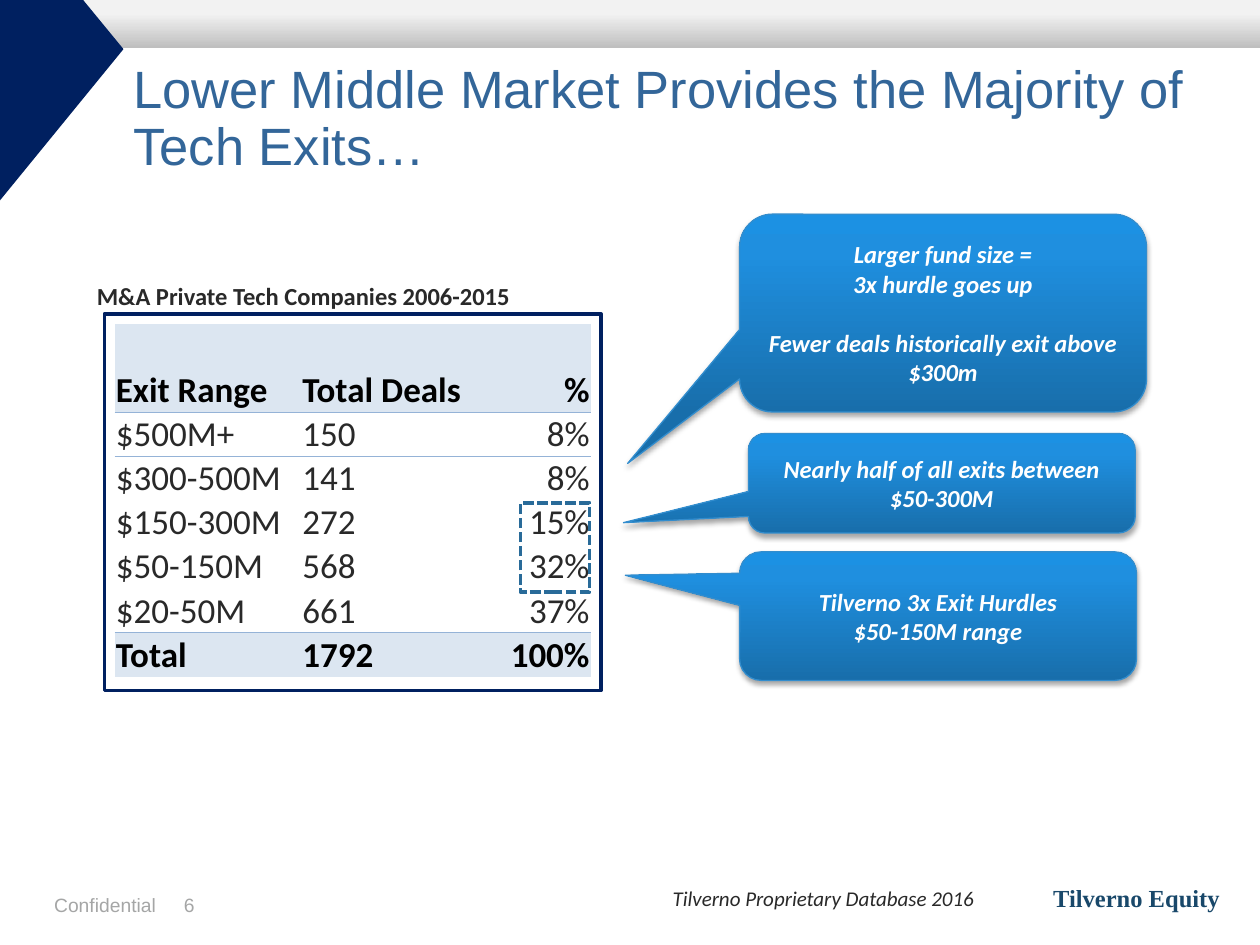
from lxml import etree
from pptx import Presentation
from pptx.dml.color import RGBColor
from pptx.enum.dml import MSO_LINE
from pptx.enum.shapes import MSO_SHAPE
from pptx.enum.text import MSO_ANCHOR, PP_ALIGN
from pptx.oxml.ns import qn
from pptx.util import Inches, Pt

RECTANGLE = MSO_SHAPE.RECTANGLE
CALLOUT = MSO_SHAPE.ROUNDED_RECTANGULAR_CALLOUT
DASH = MSO_LINE.SQUARE_DOT
TOP, MIDDLE, BOTTOM = MSO_ANCHOR.TOP, MSO_ANCHOR.MIDDLE, MSO_ANCHOR.BOTTOM
LEFT, CENTER, RIGHT = PP_ALIGN.LEFT, PP_ALIGN.CENTER, PP_ALIGN.RIGHT

NAVY, INK, GRAY, RULE, BAND = "002060", "292929", "A5A6A6", "95B3D7", "DCE6F1"
HEADER_STOPS = [(0, "BFBFBF"), (72, "F2F2F2")]
CALLOUT_STOPS = [(0, "186EAB"), (80, "1F8FDF"), (100, "1C91E3")]
PLAIN_TABLE_STYLE = "{2D5ABB26-0587-4C30-8999-92F81FD0307C}"

EXITS = [
    ("Exit Range", "Total Deals", "%"),
    ("$500M+", "150", "8%"),
    ("$300-500M", "141", "8%"),
    ("$150-300M", "272", "15%"),
    ("$50-150M", "568", "32%"),
    ("$20-50M", "661", "37%"),
    ("Total", "1792", "100%"),
]
COLUMN_WIDTHS = [1.48, 1.48, 0.82]
ROW_HEIGHTS = [0.7] + [0.35] * 6

# Place, pointer tip and (text, space before in points) of each callout
CALLOUTS = [
    ((5.87, 1.7, 3.23, 1.57), (-0.775, 0.76),
     [("Larger fund size =", 0), ("3x hurdle goes up", 0),
      ("Fewer deals historically exit above $300m", 17)]),
    ((5.87, 4.38, 3.15, 1.02), (-0.788, -0.318),
     [("Tilverno 3x Exit Hurdles", 0), ("$50-150M range", 0)]),
    ((5.94, 3.44, 3.07, 0.79), (-0.823, 0.396),
     [("Nearly half of all exits between $50-300M", 0)]),
]


def rgb(color):
    return RGBColor.from_string(color)


def add_xml(parent, tag, **attributes):
    return etree.SubElement(parent, qn(tag), attributes)


def set_gradient(shape, stops):
    """Fill from bottom to top with (percent, color) stops."""
    shape.fill.gradient()
    shape.fill.gradient_angle = 90
    stop_list = shape._element.spPr.find(".//" + qn("a:gsLst"))
    for stop in list(stop_list):
        stop_list.remove(stop)
    for percent, color in stops:
        stop = add_xml(stop_list, "a:gs", pos=str(percent * 1000))
        add_xml(stop, "a:srgbClr", val=color)


def set_line(shape, color, width):
    shape.line.color.rgb = rgb(color)
    shape.line.width = Pt(width)


def add_shape(page, kind, place):
    shape = page.shapes.add_shape(kind, *map(Inches, place))
    shape.shadow.inherit = False
    return shape


def write(para, text, size, color, font="Calibri", bold=False, italic=False, align=LEFT):
    para.alignment = align
    span = para.add_run()
    span.text = text
    span.font.name, span.font.size = font, Pt(size)
    span.font.bold, span.font.italic = bold, italic
    span.font.color.rgb = rgb(color)


def add_text(page, place, text, size, color, inset=True, wrap=False, anchor=TOP,
             spacing=None, **style):
    frame = page.shapes.add_textbox(*map(Inches, place)).text_frame
    frame.word_wrap = wrap
    frame.vertical_anchor = anchor
    if not inset:
        frame.margin_left = frame.margin_right = 0
        frame.margin_top = frame.margin_bottom = 0
    para = frame.paragraphs[0]
    para.line_spacing = spacing
    write(para, text, size, color, **style)


def add_corner(page):
    builder = page.shapes.build_freeform(0, 0, scale=Inches(0.01))
    builder.add_line_segments([(66, 0), (98, 39), (0, 159)], close=True)
    corner = builder.convert_to_shape()
    corner.shadow.inherit = False
    corner.fill.solid()
    corner.fill.fore_color.rgb = rgb(NAVY)
    corner.line.fill.background()


def add_rule(cell, side):
    line = etree.Element(qn(side), w=str(Pt(0.5)))
    add_xml(add_xml(line, "a:solidFill"), "a:srgbClr", val=RULE)
    cell._tc.get_or_add_tcPr().insert(0, line)


def add_exit_table(page):
    place = map(Inches, (0.91, 2.57, sum(COLUMN_WIDTHS), sum(ROW_HEIGHTS)))
    table = page.shapes.add_table(len(EXITS), len(COLUMN_WIDTHS), *place).table
    table.first_row = table.horz_banding = False
    table._tbl.tblPr.find(qn("a:tableStyleId")).text = PLAIN_TABLE_STYLE
    for column, width in zip(table.columns, COLUMN_WIDTHS):
        column.width = Inches(width)
    last = len(EXITS) - 1
    for i, values in enumerate(EXITS):
        table.rows[i].height = Inches(ROW_HEIGHTS[i])
        strong = i in (0, last)
        for j, value in enumerate(values):
            cell = table.cell(i, j)
            cell.vertical_anchor = BOTTOM
            cell.margin_left = cell.margin_right = cell.margin_top = Inches(0.01)
            cell.margin_bottom = 0
            if strong:
                cell.fill.solid()
                cell.fill.fore_color.rgb = rgb(BAND)
            else:
                cell.fill.background()
            if i in (0, last - 1):
                add_rule(cell, "a:lnB")
            if i in (1, last):
                add_rule(cell, "a:lnT")
            write(cell.text_frame.paragraphs[0], value, 20,
                  "000000" if strong else INK, bold=strong,
                  align=RIGHT if j == 2 else LEFT)


def add_callout(page, place, tip, lines):
    callout = add_shape(page, CALLOUT, place)
    for i, value in enumerate((*tip, 0.167)):
        callout.adjustments[i] = value
    set_gradient(callout, CALLOUT_STOPS)
    set_line(callout, "328DCE", 0.75)
    # Soft shadow straight below
    effects = callout._element.spPr.find(qn("a:effectLst"))
    shadow = add_xml(effects, "a:outerShdw", blurRad=str(Pt(3.1)), dist=str(Pt(1.8)),
                     dir="5400000", rotWithShape="0")
    add_xml(add_xml(shadow, "a:srgbClr", val="000000"), "a:alpha", val="35000")
    frame = callout.text_frame
    frame.word_wrap = True
    frame.vertical_anchor = MIDDLE
    for i, (text, gap) in enumerate(lines):
        para = frame.add_paragraph() if i else frame.paragraphs[0]
        if gap:
            para.space_before = Pt(gap)
        write(para, text, 14, "FFFFFF", bold=True, italic=True, align=CENTER)


def main():
    deck = Presentation()
    deck.slide_width, deck.slide_height = Inches(10), Inches(7.5)
    page = deck.slides.add_slide(deck.slide_layouts[6])

    # Header
    band = add_shape(page, RECTANGLE, (0, 0, 10, 0.38))
    set_gradient(band, HEADER_STOPS)
    band.line.fill.background()
    add_corner(page)
    add_text(page, (1.06, 0.44, 8.58, 1.02),
             "Lower Middle Market Provides the Majority of Tech Exits…", 30, "336699",
             inset=False, wrap=True, anchor=MIDDLE, spacing=0.9, font="Arial")

    # Footer
    add_text(page, (0.43, 7.09, 0.94, 0.29), "Confidential", 11, GRAY,
             inset=False, wrap=True, font="Arial")
    add_text(page, (1.46, 7.09, 0.63, 0.29), "6", 11, GRAY,
             inset=False, wrap=True, font="Arial")
    add_text(page, (5.24, 6.98, 2.84, 0.3), "Tilverno Proprietary Database 2016",
             12, INK, italic=True)
    add_text(page, (8.26, 6.96, 1.78, 0.34), "Tilverno Equity", 14, "19486A",
             font="Times New Roman", bold=True)

    # Framed table
    add_text(page, (0.67, 2.18, 3.51, 0.34), "M&A Private Tech Companies 2006-2015",
             14, INK, bold=True)
    frame = add_shape(page, RECTANGLE, (0.83, 2.49, 3.94, 2.99))
    frame.fill.solid()
    frame.fill.fore_color.rgb = rgb("FFFFFF")
    set_line(frame, NAVY, 2)
    add_exit_table(page)

    # Callouts and the highlighted shares
    for place, tip, lines in CALLOUTS:
        add_callout(page, place, tip, lines)
    highlight = add_shape(page, RECTANGLE, (4.13, 3.99, 0.55, 0.71))
    highlight.fill.background()
    set_line(highlight, "296B99", 2)
    highlight.line.dash_style = DASH

    deck.save("out.pptx")


if __name__ == "__main__":
    main()
